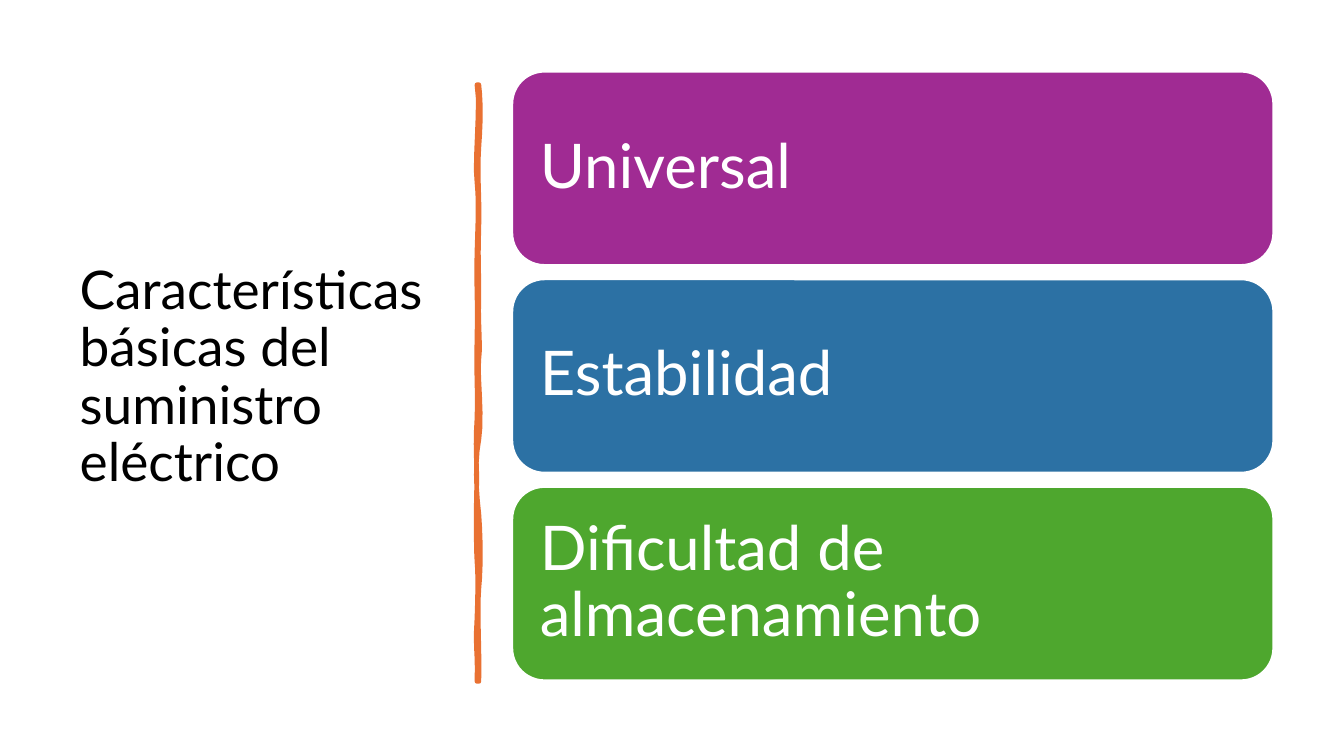
import pptx
import pptx.dml.color
import pptx.enum.shapes
import pptx.enum.text
import pptx.util

PX = 9144  # 100 px to the inch
SLIDE_SIZE = (1333, 750)

CARDS = [
    ("Universal", "A02B93"),
    ("Estabilidad", "2C71A4"),
    ("Dificultad de almacenamiento", "4EA72E"),
]
CARD_LEFT, CARD_TOP, CARD_WIDTH, CARD_HEIGHT = 508, 71, 755, 192
CARD_STEP = 206

# Each curve: two control points and an end point, as x, y pairs in px.
DIVIDER_START = (475, 84)
DIVIDER_CURVES = [
    (477, 102, 477, 119, 475, 146),
    (473, 173, 476, 195, 475, 226),
    (474, 257, 475, 262, 475, 294),
    (474, 325, 477, 342, 475, 356),
    (473, 370, 479, 414, 475, 436),
    (471, 457, 472, 484, 475, 510),
    (477, 536, 477, 564, 475, 584),
    (473, 603, 476, 650, 475, 676),
    (474, 676, 473, 676, 473, 676),
    (474, 646, 471, 644, 473, 613),
    (474, 583, 474, 570, 473, 557),
    (472, 544, 472, 495, 473, 477),
    (473, 459, 471, 445, 473, 415),
    (474, 386, 472, 373, 473, 335),
    (474, 298, 472, 281, 473, 250),
    (474, 218, 475, 200, 473, 181),
    (470, 163, 477, 104, 473, 84),
]


def color(hex_string):
    return pptx.dml.color.RGBColor.from_string(hex_string)


def set_values(target, values):
    for name, value in values.items():
        setattr(target, name, value)


def curve_points(start, curves, steps=6):
    """Sample a chain of cubic Bézier curves."""
    points = []
    for x1, y1, x2, y2, x3, y3 in curves:
        for step in range(1, steps + 1):
            t = step / steps
            weights = ((1 - t) ** 3, 3 * t * (1 - t) ** 2, 3 * t**2 * (1 - t), t**3)
            points.append(tuple(
                sum(weight * value for weight, value in zip(weights, values))
                for values in ((start[0], x1, x2, x3), (start[1], y1, y2, y3))
            ))
        start = (x3, y3)
    return points


class SlideBuilder:
    font_name = "Lato"
    line_spacing = 0.9

    def __init__(self, slide):
        self.slide = slide

    def set_text(self, shape, text, size, text_color, inset_x, inset_y):
        frame = shape.text_frame
        frame.text = text
        set_values(frame, {
            "word_wrap": True,
            "auto_size": pptx.enum.text.MSO_AUTO_SIZE.NONE,
            "vertical_anchor": pptx.enum.text.MSO_ANCHOR.MIDDLE,
            "margin_left": inset_x * PX,
            "margin_right": inset_x * PX,
            "margin_top": inset_y * PX,
            "margin_bottom": inset_y * PX,
        })
        paragraph = frame.paragraphs[0]
        set_values(paragraph, {
            "alignment": pptx.enum.text.PP_ALIGN.LEFT,
            "line_spacing": self.line_spacing,
        })
        font = paragraph.runs[0].font
        set_values(font, {"name": self.font_name, "size": pptx.util.Pt(size)})
        font.color.rgb = color(text_color)

    def paint(self, shape, fill, line, line_width):
        shape.shadow.inherit = False
        shape.fill.solid()
        shape.fill.fore_color.rgb = color(fill)
        shape.line.color.rgb = color(line)
        shape.line.width = pptx.util.Pt(line_width)

    def title(self, text, left, top, width, height):
        shape = self.slide.shapes.title
        set_values(shape, {
            "left": left * PX, "top": top * PX,
            "width": width * PX, "height": height * PX,
        })
        self.set_text(shape, text, 38, "000000", 10, 5)

    def divider(self, start, curves, fill):
        builder = self.slide.shapes.build_freeform(start[0] * PX, start[1] * PX)
        builder.add_line_segments(
            [(x * PX, y * PX) for x, y in curve_points(start, curves)], close=True
        )
        self.paint(builder.convert_to_shape(), fill, fill, 3.25)

    def card(self, text, fill, left, top, width, height):
        shape = self.slide.shapes.add_shape(
            pptx.enum.shapes.MSO_SHAPE.ROUNDED_RECTANGLE,
            left * PX, top * PX, width * PX, height * PX,
        )
        self.paint(shape, fill, "FFFFFF", 1.5)
        self.set_text(shape, text, 44, "FFFFFF", 18, 18)


def main():
    presentation = pptx.Presentation()
    presentation.slide_width, presentation.slide_height = (
        length * PX for length in SLIDE_SIZE
    )
    title_only = presentation.slide_layouts.get_by_name("Title Only")
    builder = SlideBuilder(presentation.slides.add_slide(title_only))

    builder.title("Características básicas del suministro eléctrico", 69, 70, 374, 611)
    builder.divider(DIVIDER_START, DIVIDER_CURVES, "E97132")
    for index, (text, fill) in enumerate(CARDS):
        top = CARD_TOP + index * CARD_STEP
        builder.card(text, fill, CARD_LEFT, top, CARD_WIDTH, CARD_HEIGHT)

    presentation.save("out.pptx")


if __name__ == "__main__":
    main()
